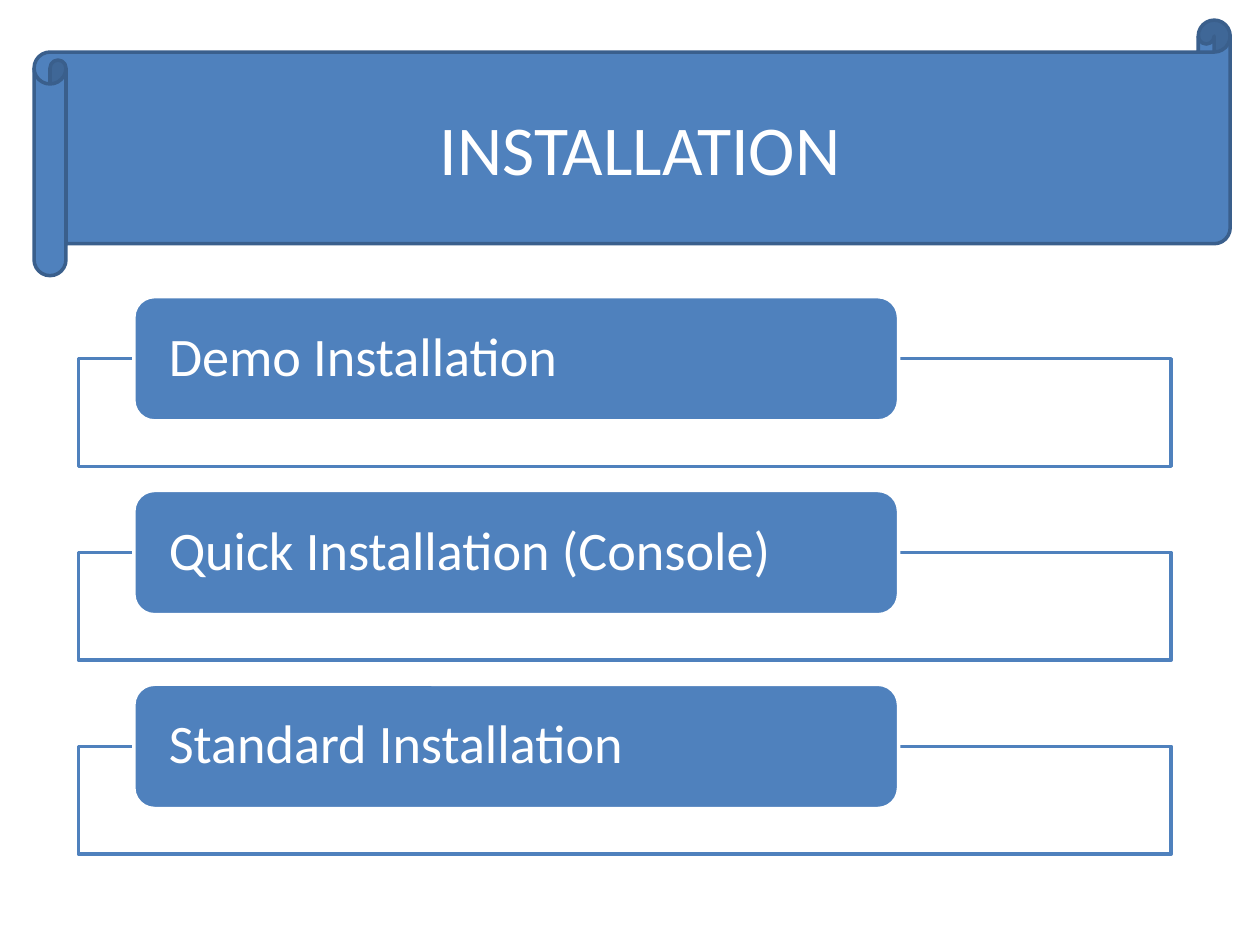
from dataclasses import dataclass

from lxml.etree import SubElement
from pptx import Presentation
from pptx.dml.color import RGBColor
from pptx.enum.shapes import MSO_SHAPE
from pptx.enum.text import MSO_ANCHOR, PP_ALIGN
from pptx.oxml.ns import qn
from pptx.util import Pt


@dataclass(frozen=True)
class Theme:
    font: str = "Calibri"
    blue: RGBColor = RGBColor(0x4F, 0x81, 0xBD)
    dark_blue: RGBColor = RGBColor(0x3A, 0x5F, 0x8C)
    white: RGBColor = RGBColor(0xFF, 0xFF, 0xFF)
    title_size: int = 40
    item_size: int = 31
    line_width: int = 2


class SlideBuilder:
    def __init__(self, slide, theme):
        self.slide = slide
        self.theme = theme

    def shape(self, kind, box, fill, line):
        sp = self.slide.shapes.add_shape(kind, *map(Pt, box))
        sp.shadow.inherit = False
        sp.fill.solid()
        sp.fill.fore_color.rgb = fill
        sp.line.color.rgb = line
        sp.line.width = Pt(self.theme.line_width)
        return sp

    def text(self, sp, text, size, align):
        tf = sp.text_frame
        tf.text = text
        tf.word_wrap = True
        tf.vertical_anchor = MSO_ANCHOR.MIDDLE
        p = tf.paragraphs[0]
        p.alignment = align
        font = p.runs[0].font
        font.name = self.theme.font
        font.size = Pt(size)
        font.color.rgb = self.theme.white
        return tf

    def banner(self, text, box):
        t = self.theme
        sp = self.shape(MSO_SHAPE.HORIZONTAL_SCROLL, box, t.blue, t.dark_blue)
        self.text(sp, text, t.title_size, PP_ALIGN.CENTER)

    def frame(self, box):
        t = self.theme
        sp = self.shape(MSO_SHAPE.RECTANGLE, box, t.white, t.blue)
        color = sp.fill._xPr.find(qn("a:solidFill"))[0]
        SubElement(color, qn("a:alpha"), val="90000")

    def label(self, text, box):
        t = self.theme
        sp = self.shape(MSO_SHAPE.ROUNDED_RECTANGLE, box, t.blue, t.white)
        tf = self.text(sp, text, t.item_size, PP_ALIGN.LEFT)
        tf.margin_left = tf.margin_right = Pt(16.5)
        tf.margin_top = tf.margin_bottom = 0
        tf.paragraphs[0].line_spacing = 0.9


def main():
    prs = Presentation()
    prs.slide_width, prs.slide_height = Pt(720), Pt(540)
    s = prs.slides.add_slide(prs.slide_layouts[6])
    builder = SlideBuilder(s, Theme())

    builder.banner("INSTALLATION", (19.5, 11.5, 683.5, 146))

    items = ["Demo Installation", "Quick Installation (Console)", "Standard Installation"]
    first_top, pitch, label_height = 169.5, 110.75, 71
    for i, item in enumerate(items):
        top = first_top + i * pitch
        builder.frame((44.75, top + label_height / 2, 624.5, 61.5))
        builder.label(item, (76.5, top, 437, label_height))

    prs.save("out.pptx")


if __name__ == "__main__":
    main()
